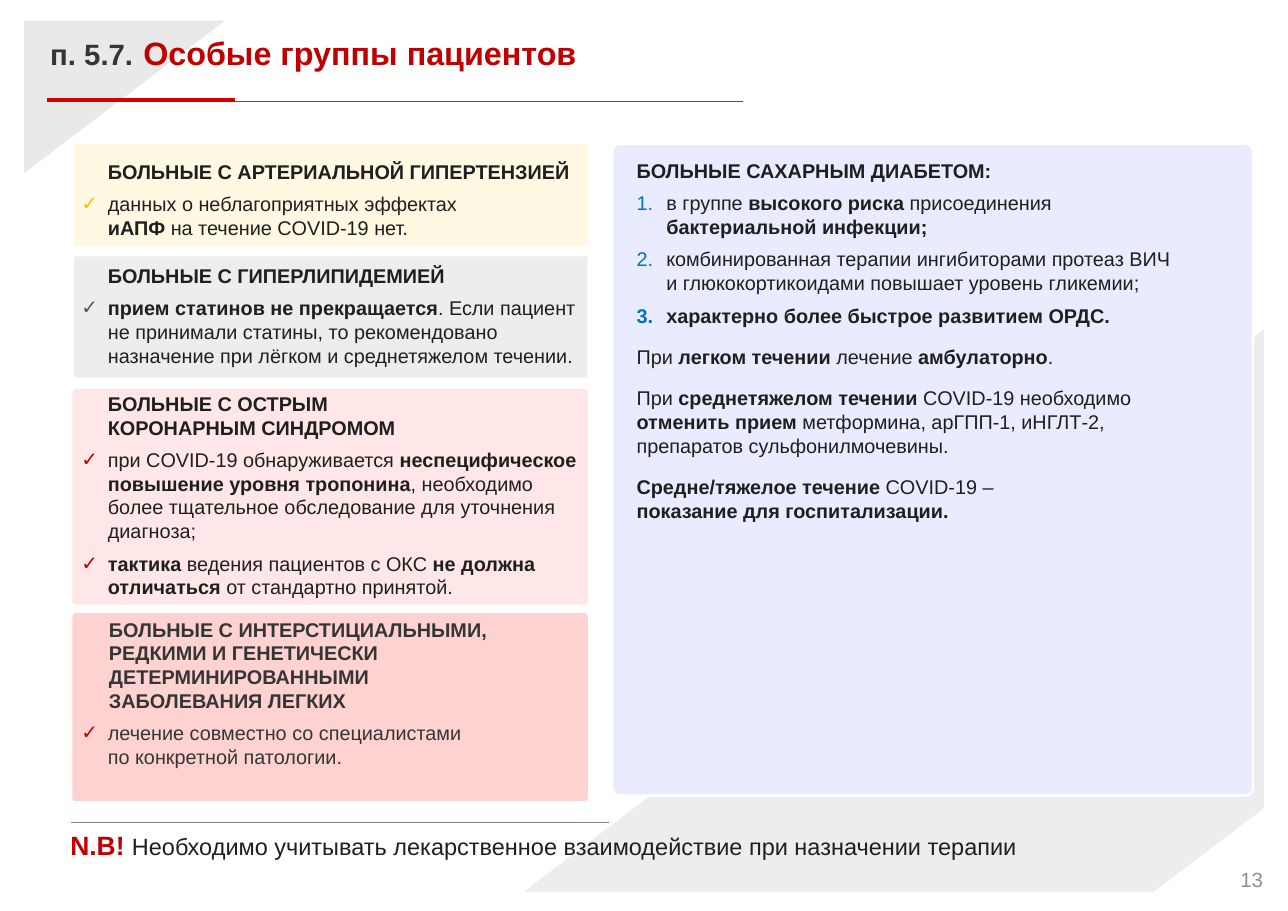
from lxml import etree
from pptx import Presentation
from pptx.dml.color import RGBColor
from pptx.enum.shapes import MSO_CONNECTOR, MSO_SHAPE
from pptx.enum.text import PP_ALIGN
from pptx.oxml.ns import qn
from pptx.util import Pt

TRIANGLE = MSO_SHAPE.RIGHT_TRIANGLE
ROUNDED = MSO_SHAPE.ROUNDED_RECTANGLE
STRAIGHT = MSO_CONNECTOR.STRAIGHT
RIGHT = PP_ALIGN.RIGHT

FONT = "Arial"
INK, DARK, RED, BLUE, WHITE = "1F1F1F", "353535", "C00000", "0070C0", "FFFFFF"
BODY_SIZE, BODY_LEADING, GAP = 27, 32.3, 12
NUMBER_INDENT = 40.5

CARDS = [
    dict(box=(100.8, 195.8, 699.1, 139.7), fill="FFF2C9", opacity=50,
         offset=21.5, mark="FFC000", ink=INK, indent=36,
         heading="БОЛЬНЫЕ С АРТЕРИАЛЬНОЙ ГИПЕРТЕНЗИЕЙ",
         items=["данных о неблагоприятных эффектах \n**иАПФ **на течение COVID-19 нет."]),
    dict(box=(100.8, 349.2, 699.1, 164.9), fill="DCDCDC", opacity=50,
         offset=9.9, mark="575757", ink=INK, indent=36,
         heading="БОЛЬНЫЕ С ГИПЕРЛИПИДЕМИЕЙ",
         items=["**прием статинов не прекращается**. Если пациент не принимали статины, "
                "то рекомендовано назначение при лёгком и среднетяжелом течении."]),
    dict(box=(98.6, 529.9, 702, 293.8), fill="FFE7E7", opacity=100,
         offset=3.6, mark=RED, ink=INK, indent=36,
         heading="БОЛЬНЫЕ С ОСТРЫМ \nКОРОНАРНЫМ СИНДРОМОМ",
         items=["при COVID-19 обнаруживается **неспецифическое повышение уровня "
                "тропонина**, необходимо более тщательное обследование для уточнения "
                "диагноза;",
                "**тактика** ведения пациентов с ОКС **не должна отличаться "
                "**от стандартно принятой."]),
    dict(box=(98.6, 835.2, 702, 256.3), fill="FFD2D2", opacity=100,
         offset=5.7, mark=RED, ink=DARK, indent=37.5,
         heading="БОЛЬНЫЕ С ИНТЕРСТИЦИАЛЬНЫМИ,\nРЕДКИМИ И ГЕНЕТИЧЕСКИ\n"
                 "ДЕТЕРМИНИРОВАННЫМИ \nЗАБОЛЕВАНИЯ ЛЕГКИХ",
         items=["лечение совместно со специалистами \nпо конкретной патологии."]),
]

DIABETES_HEADING = "БОЛЬНЫЕ САХАРНЫМ ДИАБЕТОМ:"
DIABETES_RISKS = [
    "в группе **высокого риска **присоединения \n**бактериальной инфекции;**",
    "комбинированная терапии ингибиторами протеаз ВИЧ \n"
    "и глюкокортикоидами повышает уровень гликемии;",
    "**характерно более быстрое развитием ОРДС.**",
]
DIABETES_ADVICE = [
    "При **легком течении **лечение **амбулаторно**.",
    "При **среднетяжелом течении **COVID-19 необходимо \n**отменить прием **"
    "метформина, арГПП-1, иНГЛТ-2, \nпрепаратов сульфонилмочевины.",
    "**Средне/тяжелое течение **COVID-19 – \n**показание для госпитализации.**",
]


def color(value):
    return RGBColor.from_string(value)


def points(box):
    return [Pt(value) for value in box]


def add_panel(page, kind, box, fill, opacity=100, rotation=0, corner=None, border=None):
    shape = page.shapes.add_shape(kind, *points(box))
    shape.shadow.inherit = False
    shape.rotation = rotation
    shape.fill.solid()
    shape.fill.fore_color.rgb = color(fill)
    if opacity < 100:
        tint = shape.fill._xPr.find(qn("a:solidFill"))[0]
        etree.SubElement(tint, qn("a:alpha"), val=str(opacity * 1000))
    if corner is not None:
        shape.adjustments[0] = corner
    if border:
        shape.line.color.rgb = color(border)
        shape.line.width = Pt(3)
    else:
        shape.line.fill.background()


def add_rule(page, left, top, width, stroke, weight):
    rule = page.shapes.add_connector(STRAIGHT, *points((left, top, left + width, top)))
    rule.line.color.rgb = color(stroke)
    rule.line.width = Pt(weight)
    etree.SubElement(rule._element.spPr, qn("a:effectLst"))


def add_frame(page, box):
    frame = page.shapes.add_textbox(*points(box)).text_frame
    frame.word_wrap = True
    for side in ("left", "top", "right", "bottom"):
        setattr(frame, f"margin_{side}", 0)
    return frame


def add_span(para, text, size, ink, bold=False):
    for number, line in enumerate(text.split("\n")):
        if number:
            para.add_line_break()
        if line:
            span = para.add_run()
            span.text = line
            values = {"name": FONT, "size": Pt(size), "bold": bold}
            for name, value in values.items():
                setattr(span.font, name, value)
            span.font.color.rgb = color(ink)


def add_line(page, box, spans, align=None, spacing=None):
    para = add_frame(page, box).paragraphs[0]
    values = {"alignment": align, "line_spacing": spacing}
    for name, value in values.items():
        setattr(para, name, value)
    for span in spans:
        add_span(para, *span)


def add_para(frame, text, ink=INK, indent=0, before=0, mark=None, tint=None):
    para = frame.paragraphs[0]
    if para.runs:
        para = frame.add_paragraph()
    values = {"line_spacing": Pt(BODY_LEADING), "space_before": Pt(before),
              "space_after": Pt(GAP)}
    for name, value in values.items():
        setattr(para, name, value)
    layout = para._p.get_or_add_pPr()
    layout.set("marL", str(Pt(indent)))
    layout.set("indent", str(-Pt(indent) if mark else 0))
    if mark:
        bullet_color = etree.SubElement(layout, qn("a:buClr"))
        etree.SubElement(bullet_color, qn("a:srgbClr"), val=tint)
        etree.SubElement(layout, qn("a:buFont"), typeface=FONT)
        if mark == "number":
            etree.SubElement(layout, qn("a:buAutoNum"), type="arabicPeriod")
        else:
            etree.SubElement(layout, qn("a:buChar"), char=mark)
    for number, piece in enumerate(text.split("**")):
        add_span(para, piece, BODY_SIZE, ink, number % 2 == 1)


def add_backdrop(page):
    add_panel(page, TRIANGLE, (834.5, 327.6, 766.1, 1008), "EDEDED", rotation=270)
    add_panel(page, TRIANGLE, (65.5, -5, 208.1, 274.3), "E9E9E9", rotation=90)
    add_panel(page, TRIANGLE, (1567.4, 1051.2, 160.6, 211.7), WHITE, rotation=270)


def add_header(page, left, top):
    add_line(page, (left + 5, top + 3, 116, 44),
             [("п. 5.7.", 40, DARK, True)], spacing=0.9)
    add_line(page, (left + 131.7, top, 1296.7, 48.2),
             [("Особые группы пациентов", 44, RED, True)], spacing=0.9)
    add_rule(page, left, top + 87, 948.2, "575757", 1.5)
    add_rule(page, left, top + 84.3, 257, "D30102", 5.75)


def add_card(page, box, fill, opacity, offset, mark, ink, indent, heading, items):
    left, top, width, height = box
    add_panel(page, ROUNDED, box, fill, opacity, corner=0.018)
    frame = add_frame(page, (110.9, top + offset, 685.4, height - offset))
    add_para(frame, f"**{heading}**", ink, indent)
    for item in items:
        add_para(frame, item, ink, 36, mark="✓", tint=mark)


def add_diabetes(page, box):
    left, top, width, height = box
    add_panel(page, ROUNDED, box, "E8ECFE", corner=0.012, border=WHITE)
    frame = add_frame(page, (left + 33.1, top + 20.2, width - 40.3, height - 40))
    add_para(frame, f"**{DIABETES_HEADING}**")
    for risk in DIABETES_RISKS:
        add_para(frame, risk, indent=NUMBER_INDENT, mark="number", tint=BLUE)
    for advice in DIABETES_ADVICE:
        add_para(frame, advice, before=GAP)


def add_footer(page, left, top):
    add_rule(page, left + 1.5, top, 731.5, "808080", 1)
    add_line(page, (left, top + 8.7, 1347, 44), [
        ("N.B! ", 36, RED, True),
        ("Необходимо учитывать лекарственное взаимодействие при назначении терапии",
         32, INK),
    ])
    add_line(page, (1648.1, top + 60.5, 72, 33.8), [("13", 28, "8F8F8F")], RIGHT)


def main():
    deck = Presentation()
    deck.slide_width = Pt(1754)
    deck.slide_height = Pt(1241)
    page = deck.slides.add_slide(deck.slide_layouts[6])
    add_backdrop(page)
    add_header(page, 63.4, 51.8)
    for card in CARDS:
        add_card(page, **card)
    add_diabetes(page, (833.8, 195.8, 872.6, 887.8))
    add_footer(page, 95.7, 1120.3)
    deck.save("out.pptx")


if __name__ == "__main__":
    main()
